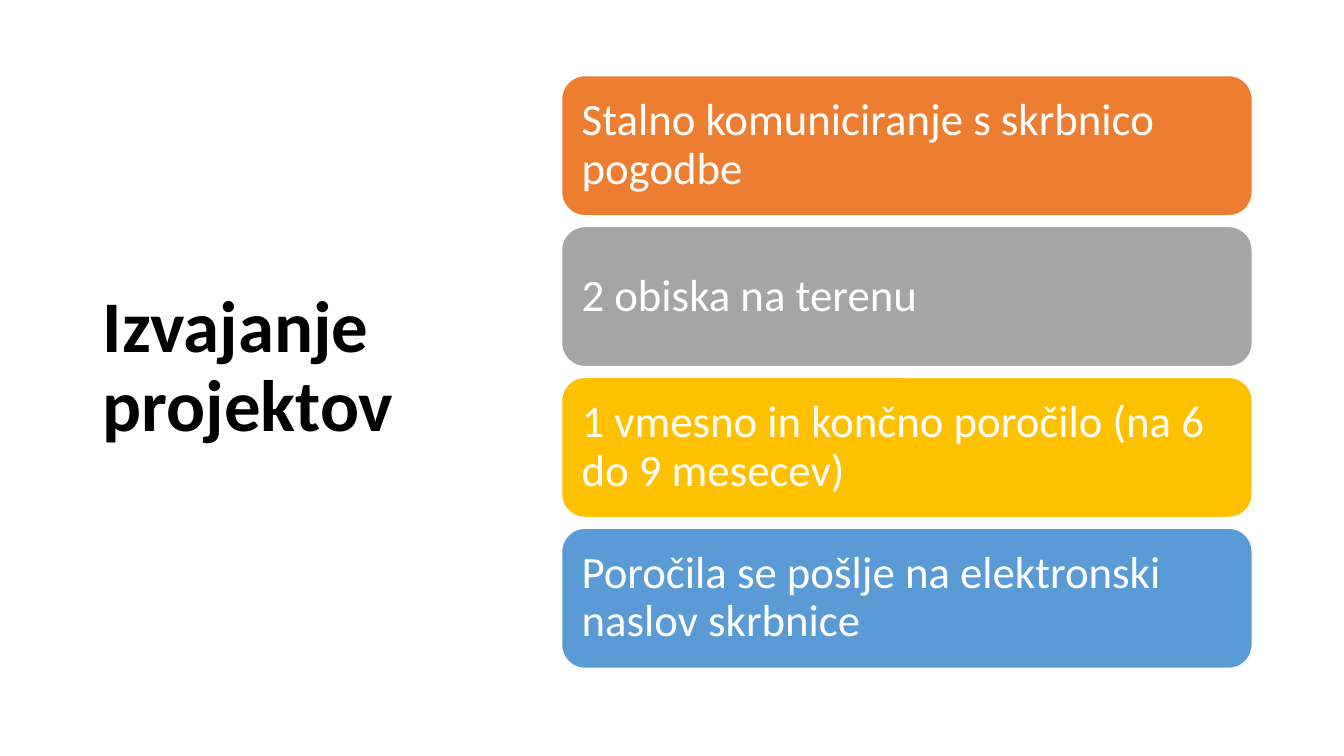
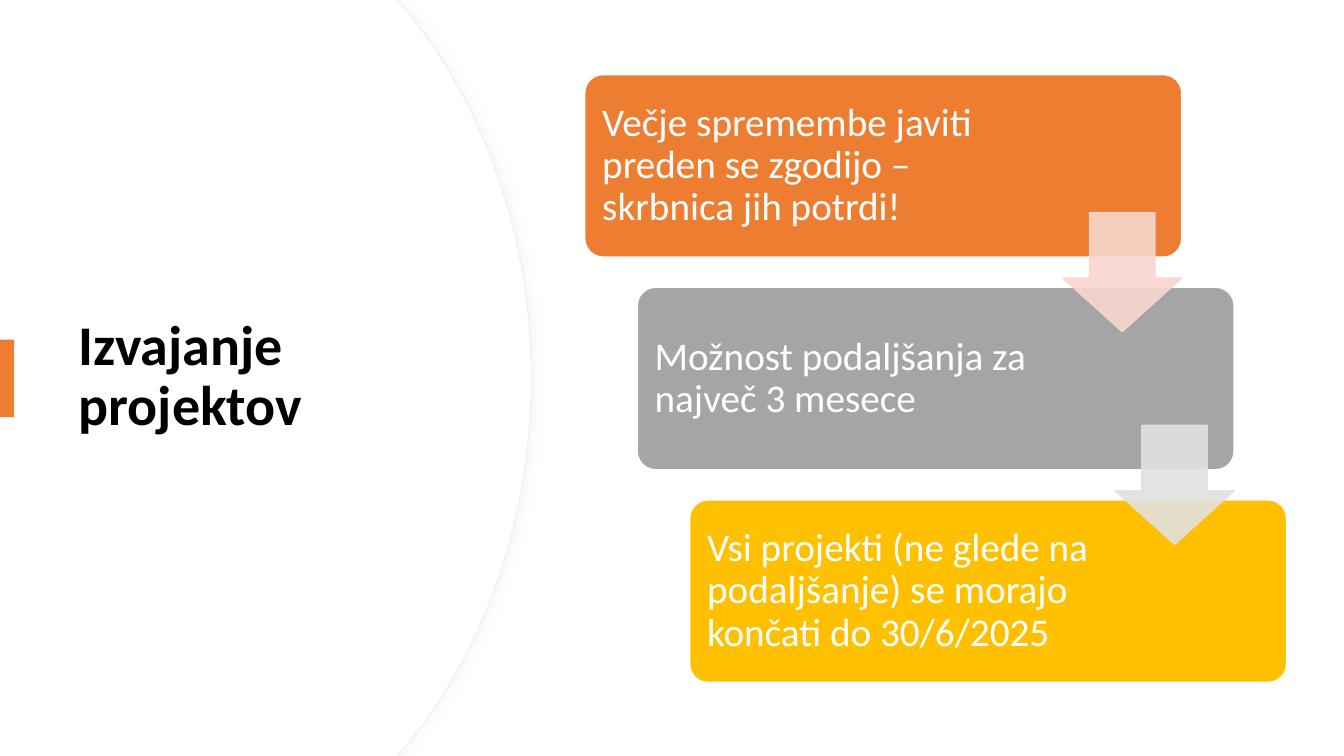
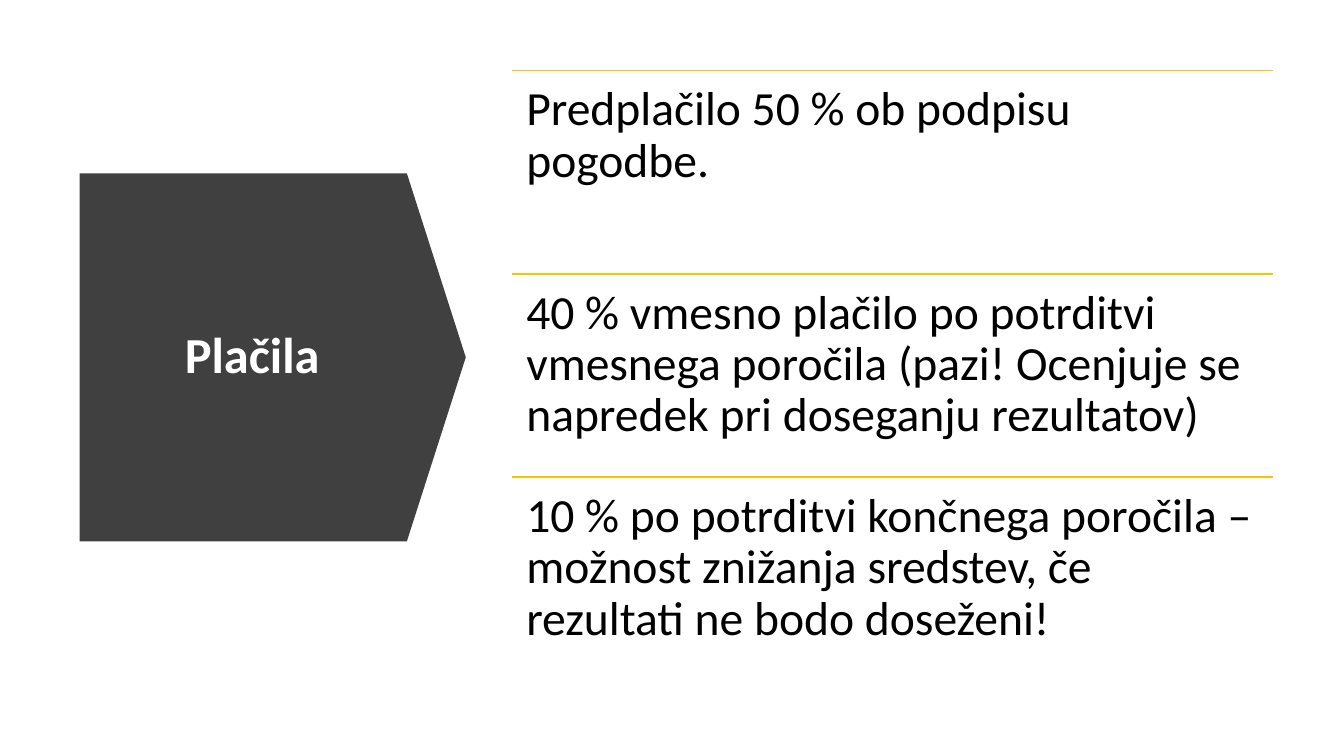
from lxml import etree
from pptx import Presentation
from pptx import util as u
from pptx.dml import color
from pptx.enum import shapes, text
from pptx.oxml import ns

PX = 9144
FONT = "Calibri"
COLORS = {
    "white": "FFFFFF", "black": "000000", "charcoal": "404040",
    "orange": "ED7D31", "grey": "A5A5A5", "gold": "FFC000", "blue": "5B9BD5",
    "pale_orange": "F8D7CE", "pale_grey": "E1E1E1",
    "edge": "EFEFEF", "shade": "D9D9D9",
}


def px(value):
    return u.Emu(round(value * PX))


def rgb(name):
    return color.RGBColor.from_string(COLORS[name])


def add_alpha(root, percent):
    for tint in root.iter(ns.qn("a:srgbClr")):
        etree.SubElement(tint, ns.qn("a:alpha"), val=str(percent * 1000))


def paint(shape, fill, line=None, width=1):
    shape.shadow.inherit = False
    shape.fill.solid()
    shape.fill.fore_color.rgb = rgb(fill)
    if line:
        shape.line.color.rgb = rgb(line)
        shape.line.width = u.Pt(width)
    else:
        shape.line.fill.background()


def add_block(slide, kind, box, fill, line=None, adjust=()):
    block = slide.shapes.add_shape(kind, *map(px, box))
    paint(block, fill, line)
    for i, value in enumerate(adjust):
        block.adjustments[i] = value
    return block


def write(shape, words, size, ink="black", bold=False, align="LEFT",
          anchor="MIDDLE", insets=(10, 5, 10, 5)):
    frame = shape.text_frame
    frame.word_wrap = True
    frame.vertical_anchor = text.MSO_ANCHOR[anchor]
    (frame.margin_left, frame.margin_top,
     frame.margin_right, frame.margin_bottom) = map(px, insets)
    paragraph = frame.paragraphs[0]
    paragraph.alignment = text.PP_ALIGN[align]
    paragraph.line_spacing = 0.9
    run = paragraph.add_run()
    run.text = words
    run.font.name = FONT
    run.font.size = u.Pt(size)
    run.font.bold = bold
    run.font.color.rgb = rgb(ink)


def write_box(slide, box, words, size, **style):
    write(slide.shapes.add_textbox(*map(px, box)), words, size, **style)


def add_title(slide, box, words, size):
    write_box(slide, box, words, size, bold=True)


def card_stack(slide, box, cards, card_height=139):
    left, top, width, height = box
    pitch = (height - card_height) / (len(cards) - 1)
    for i, (words, fill) in enumerate(cards):
        card = add_block(slide, shapes.MSO_SHAPE.ROUNDED_RECTANGLE,
                         (left, top + i * pitch, width, card_height),
                         fill, "white")
        write(card, words, 32, ink="white", insets=(13,) * 4)


def step_cascade(slide, box, steps, arrow_fills, card_width=592,
                 card_height=181, arrow=118):
    left, top, width, height = box
    shift = (width - card_width) / (len(steps) - 1)
    pitch = (height - card_height) / (len(steps) - 1)
    for i, (words, fill) in enumerate(steps):
        card = add_block(slide, shapes.MSO_SHAPE.ROUNDED_RECTANGLE,
                         (left + i * shift, top + i * pitch,
                          card_width, card_height),
                         fill, "white", (0.1,))
        write(card, words, 28, ink="white", insets=(12, 12, 183, 12))
    for i, fill in enumerate(arrow_fills):
        gap_middle = top + i * pitch + (card_height + pitch) / 2
        pointer = add_block(slide, shapes.MSO_SHAPE.DOWN_ARROW,
                            (left + i * shift + card_width - arrow,
                             gap_middle - arrow / 2, arrow, arrow),
                            fill, fill, (0.55, 0.45))
        add_alpha(pointer._element.spPr, 90)


def bend(shape, first_segments):
    segments = list(shape._element.spPr.iter(ns.qn("a:lnTo")))
    for first in first_segments:
        arc = etree.Element(ns.qn("a:cubicBezTo"))
        segments[first].addprevious(arc)
        for segment in segments[first:first + 3]:
            arc.append(segment[0])
            segment.getparent().remove(segment)


def round_panel(slide, box, line=None):
    left, top, width, height = box
    upper = [(width - 133, 0), (width - 126, 8), (width - 48, 102),
             (width, 232)]
    lower = [(x, height - y) for x, y in reversed(upper)]
    outline = [*upper, (width, height / 2), *lower, (0, height)]
    builder = slide.shapes.build_freeform(px(left), px(top))
    builder.add_line_segments([(px(left + x), px(top + y)) for x, y in outline])
    panel = builder.convert_to_shape()
    bend(panel, (2, 5))
    paint(panel, "white", line, 0.75)
    return panel


def cast_shadow(shape):
    effects = shape._element.spPr.find(ns.qn("a:effectLst"))
    shadow = etree.SubElement(effects, ns.qn("a:outerShdw"),
                              blurRad=str(u.Pt(7)), dist=str(u.Pt(3)), dir="0")
    etree.SubElement(shadow, ns.qn("a:srgbClr"), val=COLORS["shade"])
    add_alpha(shadow, 20)


def ruled_list(slide, box, entries):
    left, top, width, height = box
    row = height / len(entries)
    for i, words in enumerate(entries):
        y = top + i * row
        rule = slide.shapes.add_connector(
            shapes.MSO_CONNECTOR.STRAIGHT,
            px(left), px(y), px(left + width), px(y))
        rule.line.color.rgb = rgb("gold")
        rule.line.width = u.Pt(1)
        etree.SubElement(rule._element.spPr, ns.qn("a:effectLst"))
        write_box(slide, (left, y, width, row), words, 34,
                  anchor="TOP", insets=(14,) * 4)


def communication_slide(slide):
    add_title(slide, (92, 61, 369, 609), "Izvajanje projektov", 52)
    card_stack(slide, (557, 75, 685, 588), [
        ("Stalno komuniciranje s skrbnico pogodbe", "orange"),
        ("2 obiska na terenu", "grey"),
        ("1 vmesno in končno poročilo (na 6 do 9 mesecev)", "gold"),
        ("Poročila se pošlje na elektronski naslov skrbnice", "blue"),
    ])


def changes_slide(slide):
    cast_shadow(round_panel(slide, (0, 0, 527, 750), "edge"))
    round_panel(slide, (0, 0, 526, 750))
    add_title(slide, (68, 127, 394, 495), "Izvajanje projektov", 40)
    add_block(slide, shapes.MSO_SHAPE.RECTANGLE, (0, 337, 14, 77), "orange")
    step_cascade(slide, (580, 74, 696, 603), [
        ("Večje spremembe javiti preden se zgodijo – skrbnica jih potrdi!",
         "orange"),
        ("Možnost podaljšanja za največ 3 mesece", "grey"),
        ("Vsi projekti (ne glede na podaljšanje) se morajo končati do 30/6/2025",
         "gold"),
    ], ["pale_orange", "pale_grey"])


def payments_slide(slide):
    pentagon = add_block(slide, shapes.MSO_SHAPE.PENTAGON,
                         (79, 172, 383, 365), "charcoal", adjust=(0.16,))
    write(pentagon, "Plačila ", 36, ink="white", bold=True, align="CENTER")
    ruled_list(slide, (508, 70, 755, 605), [
        "Predplačilo 50 % ob podpisu pogodbe.",
        "40 % vmesno plačilo po potrditvi vmesnega poročila (pazi! "
        "Ocenjuje se napredek pri doseganju rezultatov)",
        "10 % po potrditvi končnega poročila – možnost znižanja sredstev, "
        "če rezultati ne bodo doseženi!",
    ])


def main():
    deck = Presentation()
    deck.slide_width, deck.slide_height = u.Inches(13.33), u.Inches(7.5)
    for build in (communication_slide, changes_slide, payments_slide):
        build(deck.slides.add_slide(deck.slide_layouts[6]))
    deck.save("out.pptx")


if __name__ == "__main__":
    main()
